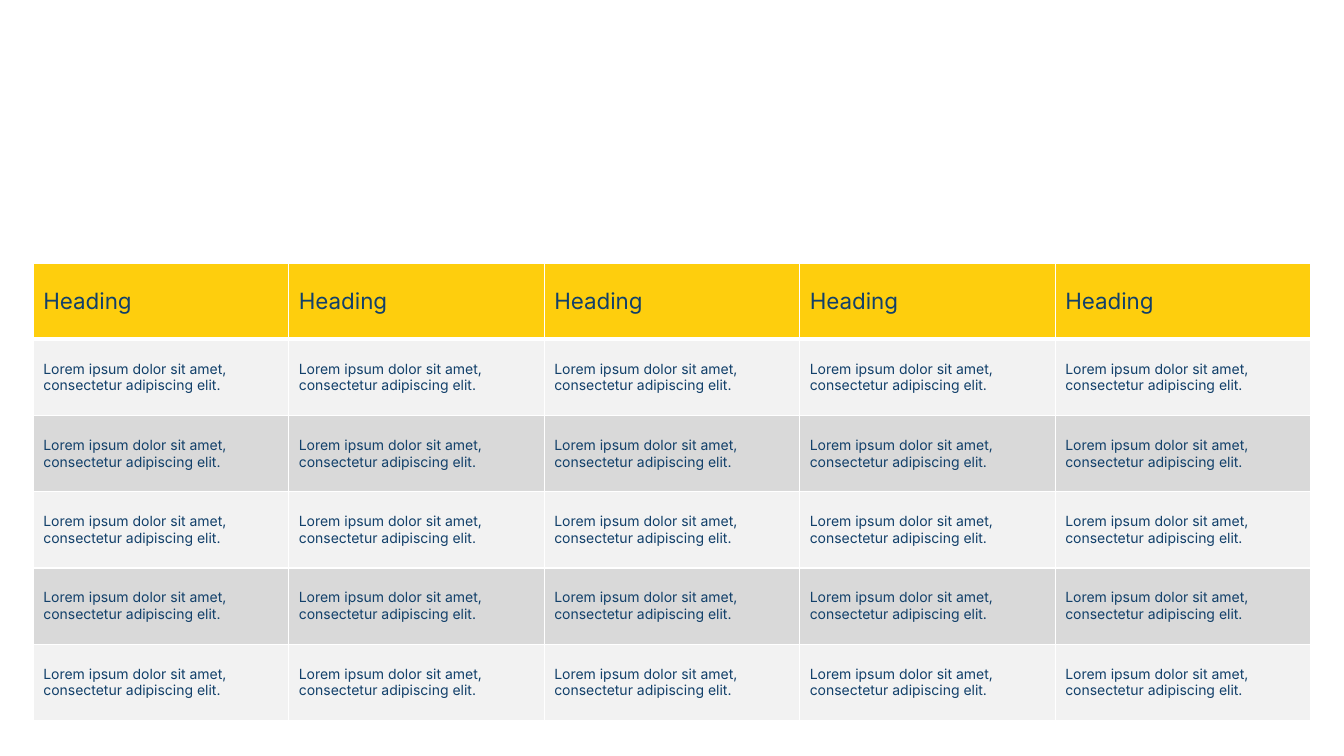
from pptx import Presentation
from pptx.dml.color import RGBColor
from pptx.enum.text import MSO_ANCHOR
from pptx.oxml import parse_xml
from pptx.oxml.ns import nsdecls
from pptx.util import Inches, Pt

ROWS, COLUMNS = 6, 5
HEADING = "Heading"
BODY = "Lorem ipsum dolor sit amet, consectetur adipiscing elit."
NAVY, YELLOW, WHITE = "12406A", "FECE0D", "FFFFFF"
BANDS = ["D9D9D9", "F2F2F2"]  # even rows, odd rows


def color(value):
    return RGBColor.from_string(value)


def add_border(cell, side, points):
    cell._tc.get_or_add_tcPr().append(parse_xml(
        f'<a:{side} {nsdecls("a")} w="{Pt(points)}"><a:solidFill>'
        f'<a:srgbClr val="{WHITE}"/></a:solidFill></a:{side}>'))


# Slide
presentation = Presentation()
presentation.slide_width = Inches(13.33)
presentation.slide_height = Inches(7.5)
slide = presentation.slides.add_slide(presentation.slide_layouts[6])

# Table grid
table = slide.shapes.add_table(
    ROWS, COLUMNS, Inches(0.33), Inches(2.61), Inches(12.67), Inches(4.54)).table
for column in table.columns:
    column.width = Inches(12.67 / COLUMNS)
for row in table.rows:
    row.height = Inches(4.54 / ROWS)

# Heading row and banded body rows
for row_index, row in enumerate(table.rows):
    is_heading = row_index == 0
    borders = {
        "lnL": 1,
        "lnR": 1,
        "lnT": 3 if row_index == 1 else 1,
        "lnB": 3 if is_heading else 1,
    }
    font_format = {"name": "Inter", "size": Pt(16 if is_heading else 10), "bold": False}
    for cell in row.cells:
        # Borders come before the fill in the cell properties
        for side, points in borders.items():
            add_border(cell, side, points)
        cell.fill.solid()
        cell.fill.fore_color.rgb = color(YELLOW if is_heading else BANDS[row_index % 2])
        cell.vertical_anchor = MSO_ANCHOR.MIDDLE
        cell.text = HEADING if is_heading else BODY
        font = cell.text_frame.paragraphs[0].runs[0].font
        for name, value in font_format.items():
            setattr(font, name, value)
        font.color.rgb = color(NAVY)

presentation.save("out.pptx")
